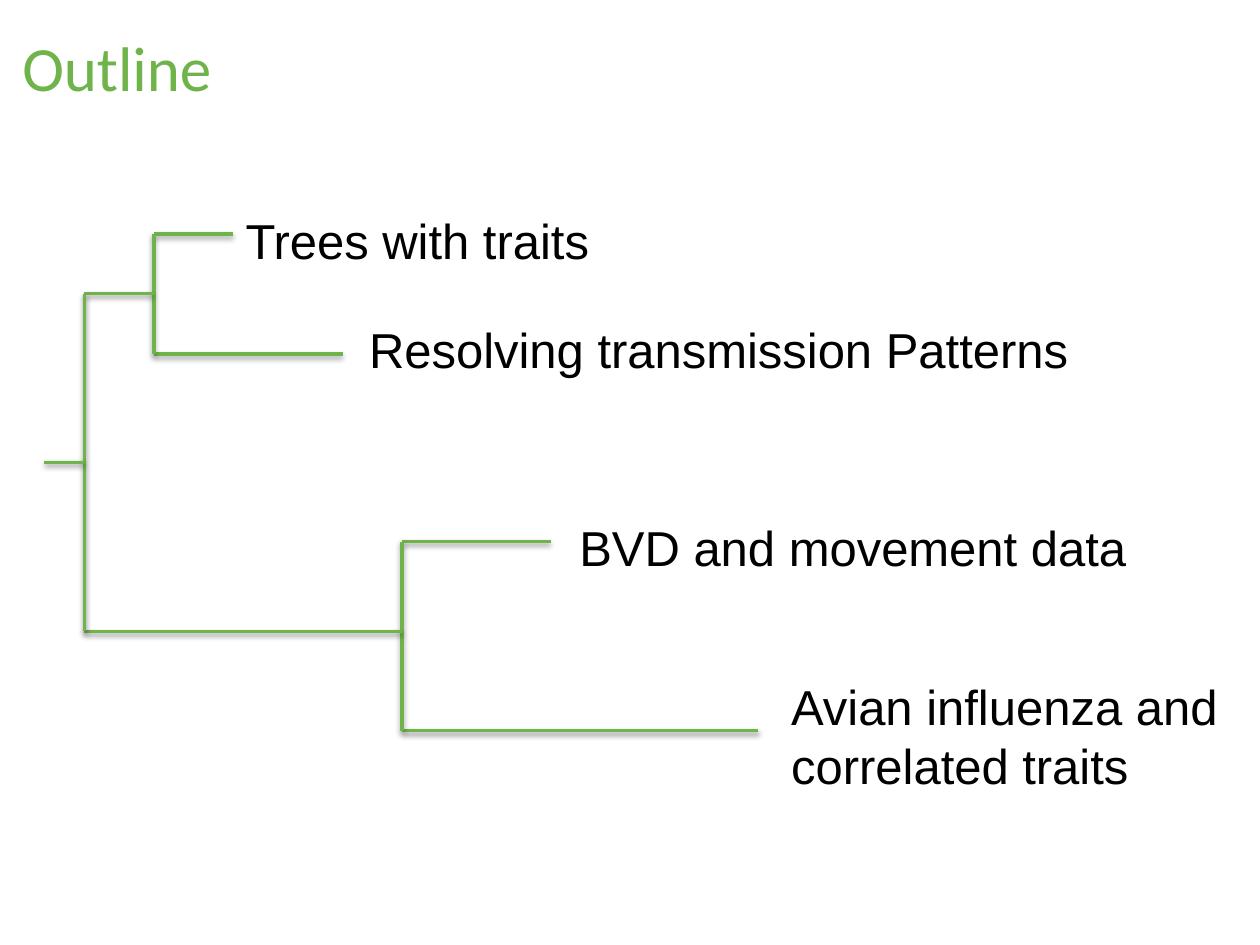
from lxml.etree import SubElement
from pptx import Presentation
from pptx.dml.color import RGBColor
from pptx.enum.shapes import MSO_CONNECTOR
from pptx.enum.text import MSO_ANCHOR, MSO_AUTO_SIZE
from pptx.oxml.ns import qn
from pptx.util import Cm, Pt

COLORS = {"green": "6FB34B", "text": "000000", "shadow": "000000"}


class OutlineSlide:
    line_width = Pt(2)

    def __init__(self, slide):
        self.slide = slide

    def text(self, words, left, top, width, height, size=28, font="Arial",
             color="text", anchor=MSO_ANCHOR.TOP, wrap=False):
        shape = self.slide.shapes.add_textbox(Cm(left), Cm(top), Cm(width), Cm(height))
        frame = shape.text_frame
        frame.word_wrap = wrap
        frame.auto_size = MSO_AUTO_SIZE.SHAPE_TO_FIT_TEXT
        frame.vertical_anchor = anchor
        run = frame.paragraphs[0].add_run()
        run.text = words
        run.font.size = Pt(size)
        run.font.name = font
        run.font.color.rgb = RGBColor.from_string(COLORS[color])

    def line(self, start_x, start_y, end_x, end_y):
        connector = self.slide.shapes.add_connector(
            MSO_CONNECTOR.STRAIGHT, Cm(start_x), Cm(start_y), Cm(end_x), Cm(end_y))
        connector.line.width = self.line_width
        connector.line.color.rgb = RGBColor.from_string(COLORS["green"])
        self.shadow(connector)

    def shadow(self, connector):
        effects = SubElement(connector._element.spPr, qn("a:effectLst"))
        shadow = SubElement(effects, qn("a:outerShdw"), blurRad=str(Pt(3.1)),
                            dist=str(Pt(1.6)), dir="5400000", rotWithShape="0")
        color = SubElement(shadow, qn("a:srgbClr"), val=COLORS["shadow"])
        SubElement(color, qn("a:alpha"), val="38000")

    def fork(self, node_x, upper, lower):
        for tip_x, tip_y in (upper, lower):
            self.line(tip_x, tip_y, node_x, tip_y)
        self.line(node_x, upper[1], node_x, lower[1])


def main():
    presentation = Presentation()
    presentation.slide_width = Cm(25.4)
    presentation.slide_height = Cm(19.05)
    outline = OutlineSlide(presentation.slides.add_slide(presentation.slide_layouts[6]))

    outline.text("Outline", 0.2, 0.43, 15.88, 1.8, size=36, font="Calibri",
                 color="green", anchor=MSO_ANCHOR.BOTTOM, wrap=True)
    outline.text("Trees with traits", 4.7, 4.11, 7.52, 1.45)
    outline.text("Resolving transmission Patterns", 7.19, 6.32, 14.76, 1.45)
    outline.text("BVD and movement data", 11.43, 10.31, 11.66, 1.45)
    outline.text("Avian influenza and correlated traits", 15.7, 13.51, 9.4, 2.64, wrap=True)

    root_x, upper_x, lower_x = 1.7, 3.1, 8.1
    outline.fork(lower_x, (11.1, 10.92), (15.29, 14.73))
    outline.fork(upper_x, (4.7, 4.72), (6.91, 7.14))
    outline.fork(root_x, (upper_x, 5.92), (lower_x, 12.73))
    outline.line(root_x, 9.32, 0.89, 9.32)

    presentation.save("out.pptx")


if __name__ == "__main__":
    main()
